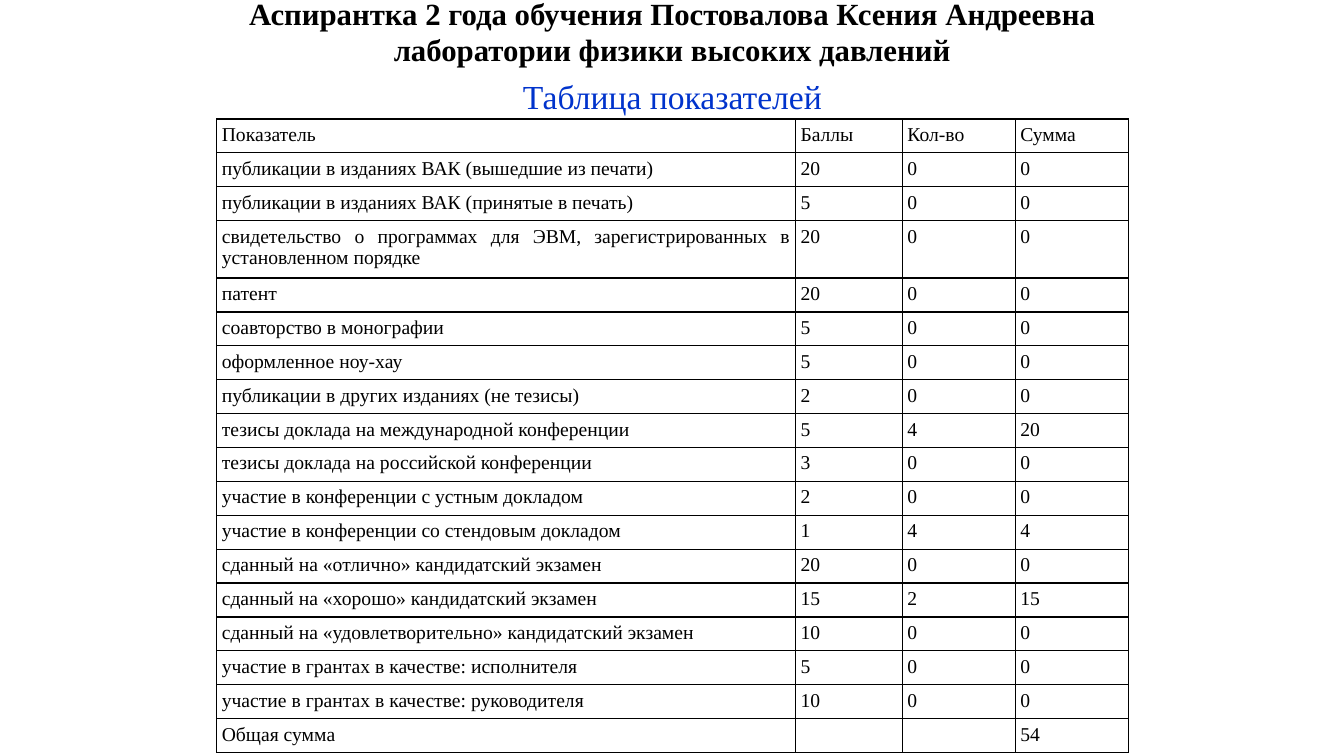
"""Build a slide with a postgraduate student's table of performance indicators."""
import lxml.etree
import pptx
import pptx.dml.color
import pptx.enum.text
import pptx.oxml.ns
import pptx.util

Inches = pptx.util.Inches
Pt = pptx.util.Pt
ALIGN = pptx.enum.text.PP_ALIGN
ANCHOR = pptx.enum.text.MSO_ANCHOR

TITLE = "Аспирантка 2 года обучения Постовалова Ксения Андреевна\vлаборатории физики высоких давлений"
SUBTITLE = "Таблица показателей"
INDICATORS = [
    ("Показатель", "Баллы", "Кол-во", "Сумма"),
    ("публикации в изданиях ВАК (вышедшие из печати)", "20", "0", "0"),
    ("публикации в изданиях ВАК (принятые в печать)", "5", "0", "0"),
    ("свидетельство о программах для ЭВМ, зарегистрированных в установленном порядке", "20", "0", "0"),
    ("патент", "20", "0", "0"),
    ("соавторство в монографии", "5", "0", "0"),
    ("оформленное ноу-хау", "5", "0", "0"),
    ("публикации в других изданиях (не тезисы)", "2", "0", "0"),
    ("тезисы доклада на международной конференции", "5", "4", "20"),
    ("тезисы доклада на российской конференции", "3", "0", "0"),
    ("участие в конференции с устным докладом", "2", "0", "0"),
    ("участие в конференции со стендовым докладом", "1", "4", "4"),
    ("сданный на «отлично» кандидатский экзамен", "20", "0", "0"),
    ("сданный на «хорошо» кандидатский экзамен", "15", "2", "15"),
    ("сданный на «удовлетворительно» кандидатский экзамен", "10", "0", "0"),
    ("участие в грантах в качестве: исполнителя", "5", "0", "0"),
    ("участие в грантах в качестве: руководителя", "10", "0", "0"),
    ("Общая сумма", "", "", "54"),
]
TABLE_BOX = (2.15, 1.18, 9.04, 6.29)
COLUMN_WIDTHS = (5.74, 1.06, 1.12, 1.12)
TWO_LINE_ROW, TWO_LINE_HEIGHT = 3, 0.57

THEME = {
    "font": "Times New Roman",
    "title": {"size": 22, "color": "000000", "bold": True},
    "subtitle": {"size": 24, "color": "0033CC", "bold": False},
    "cell": {"size": 14, "color": "000000", "bold": False},
    "border": {"color": "000000", "width": 1},
    "inset": 0.05,
}


def set_attributes(target, values):
    for name, value in values.items():
        setattr(target, name, value)


def add_element(parent, tag, **attributes):
    return lxml.etree.SubElement(parent, pptx.oxml.ns.qn(tag), **attributes)


def margins():
    return {f"margin_{side}": Inches(THEME["inset"]) for side in ("left", "top", "right", "bottom")}


def write(paragraph, text, role, **formats):
    style = THEME[role]
    paragraph.text = text
    set_attributes(paragraph, formats)
    for run in paragraph.runs:
        set_attributes(run.font, {"name": THEME["font"], "size": Pt(style["size"]), "bold": style["bold"]})
        run.font.color.rgb = pptx.dml.color.RGBColor.from_string(style["color"])
    if not text:
        add_element(paragraph._p, "a:endParaRPr", sz=str(style["size"] * 100))


def add_text(slide, box, text, role, anchor, **formats):
    frame = slide.shapes.add_textbox(*map(Inches, box)).text_frame
    set_attributes(frame, {"word_wrap": True, "vertical_anchor": anchor, **margins()})
    write(frame.paragraphs[0], text, role, alignment=ALIGN.CENTER, **formats)


def add_borders(cell):
    properties = cell._tc.get_or_add_tcPr()
    for side in ("a:lnL", "a:lnR", "a:lnT", "a:lnB"):
        line = add_element(properties, side, w=str(Pt(THEME["border"]["width"])))
        fill = add_element(line, "a:solidFill")
        add_element(fill, "a:srgbClr", val=THEME["border"]["color"])


def add_indicator_table(slide):
    row_count = len(INDICATORS)
    table = slide.shapes.add_table(row_count, len(COLUMN_WIDTHS), *map(Inches, TABLE_BOX)).table
    set_attributes(table, {"first_row": False, "horz_banding": False})
    for column, width in zip(table.columns, COLUMN_WIDTHS):
        column.width = Inches(width)
    row_height = (TABLE_BOX[3] - TWO_LINE_HEIGHT) / (row_count - 1)
    for row_index, values in enumerate(INDICATORS):
        table.rows[row_index].height = Inches(TWO_LINE_HEIGHT if row_index == TWO_LINE_ROW else row_height)
        for column_index, value in enumerate(values):
            cell = table.cell(row_index, column_index)
            set_attributes(cell, margins())
            alignment = ALIGN.LEFT if column_index else ALIGN.JUSTIFY
            write(cell.text_frame.paragraphs[0], value, "cell", alignment=alignment)
            add_borders(cell)
            cell.fill.background()


def main():
    presentation = pptx.Presentation()
    set_attributes(presentation, {"slide_width": Inches(13.33), "slide_height": Inches(7.5)})
    slide = presentation.slides.add_slide(presentation.slide_layouts[6])
    add_text(slide, (3.22, 0.7, 6.9, 0.46), SUBTITLE, "subtitle", ANCHOR.TOP, space_before=Pt(5))
    add_indicator_table(slide)
    add_text(slide, (1.14, -0.24, 11.05, 1.1), TITLE, "title", ANCHOR.MIDDLE)
    presentation.save("out.pptx")


if __name__ == "__main__":
    main()
